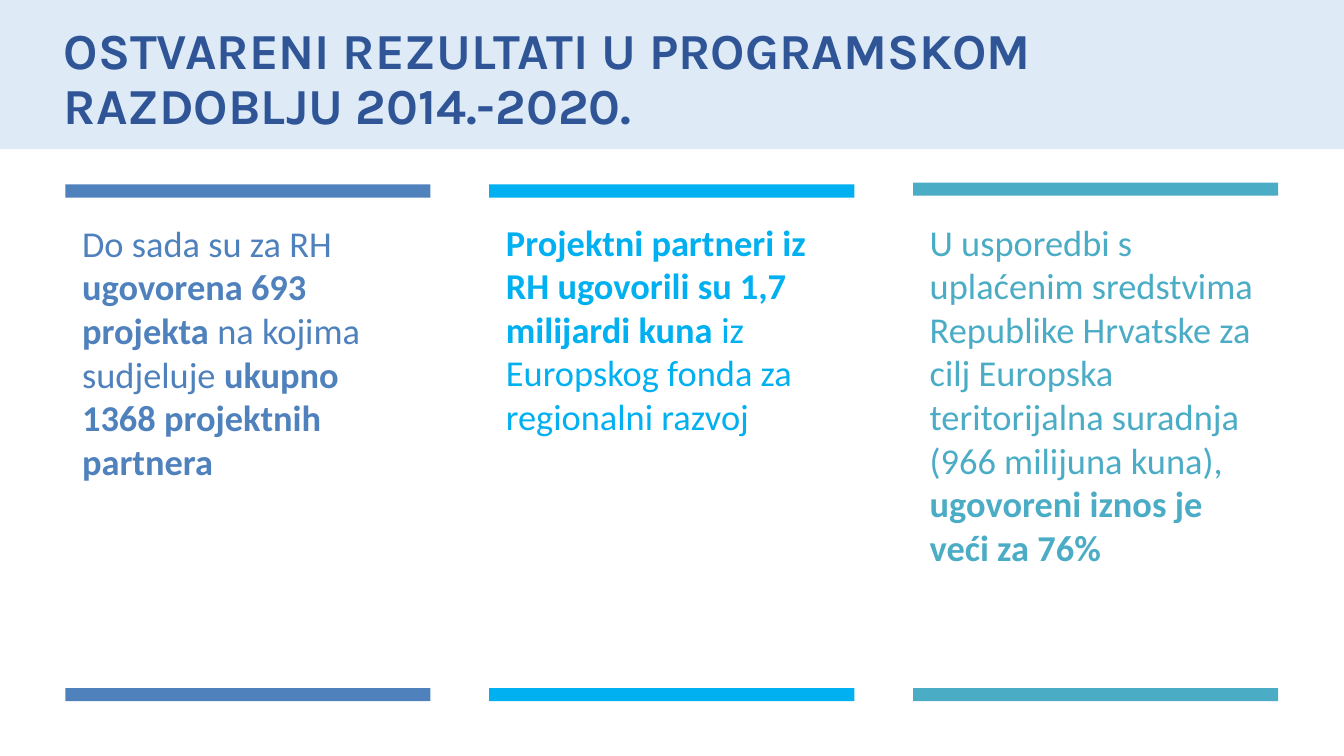
import pptx
import pptx.dml.color
import pptx.enum.shapes
import pptx.enum.text
import pptx.util

Cm = pptx.util.Cm
Pt = pptx.util.Pt
RGBColor = pptx.dml.color.RGBColor
RECTANGLE = pptx.enum.shapes.MSO_SHAPE.RECTANGLE
ANCHOR = pptx.enum.text.MSO_ANCHOR
AUTO_SIZE = pptx.enum.text.MSO_AUTO_SIZE

PALE_BLUE = RGBColor(0xDE, 0xEB, 0xF7)
NAVY = RGBColor(0x2F, 0x55, 0x97)
BLUE = RGBColor(0x4F, 0x81, 0xBD)
SKY = RGBColor(0x00, 0xB0, 0xF0)
TEAL = RGBColor(0x4B, 0xAC, 0xC6)

# Content: each result has a colour, the top of its upper bar and text top in cm,
# and its text as (words, bold) pieces
HEADING = "OSTVARENI REZULTATI U PROGRAMSKOM RAZDOBLJU 2014.-2020."
RESULTS = [
    (BLUE, 4.65, 5.44, [
        ("Do sada su za RH ", False),
        ("ugovorena 693 projekta ", True),
        ("na kojima sudjeluje ", False),
        ("ukupno 1368 projektnih partnera", True),
    ]),
    (SKY, 4.65, 5.41, [
        ("Projektni partneri iz RH ugovorili su 1,7 milijardi kuna", True),
        (" iz Europskog fonda za regionalni razvoj", False),
    ]),
    (TEAL, 4.6, 5.41, [
        ("U usporedbi s uplaćenim sredstvima Republike Hrvatske za cilj Europska "
         "teritorijalna suradnja (966 milijuna kuna), ", False),
        ("ugovoreni iznos je veći za 76%", True),
    ]),
]

# Column grid in cm
FIRST_LEFT, COLUMN_PITCH, COLUMN_WIDTH = 1.65, 10.68, 9.2
BAR_HEIGHT, LOWER_BAR_TOP = 0.33, 17.34
TEXT_INDENT, TEXT_HEIGHT = 0.17, 9.17


def add_block(slide, left, top, width, height, color):
    block = slide.shapes.add_shape(RECTANGLE, left, top, width, height)
    block.shadow.inherit = False
    block.fill.solid()
    block.fill.fore_color.rgb = color
    block.line.fill.background()
    return block


def add_result(slide, left, color, bar_top, text_top, pieces):
    for top in (bar_top, LOWER_BAR_TOP):
        add_block(slide, Cm(left), Cm(top), Cm(COLUMN_WIDTH), Cm(BAR_HEIGHT), color)
    result = slide.shapes.add_textbox(
        Cm(left + TEXT_INDENT), Cm(text_top),
        Cm(COLUMN_WIDTH - 2 * TEXT_INDENT), Cm(TEXT_HEIGHT))
    result.text_frame.word_wrap = True
    paragraph = result.text_frame.paragraphs[0]
    paragraph.font.name = "Calibri"
    paragraph.font.size = Pt(26)
    paragraph.font.color.rgb = color
    for words, bold in pieces:
        run = paragraph.add_run()
        run.text = words
        run.font.bold = bold


def main():
    deck = pptx.Presentation()
    deck.slide_width, deck.slide_height = Cm(33.87), Cm(19.05)
    slide = deck.slides.add_slide(deck.slide_layouts[5])

    # Heading on its band
    heading = slide.shapes.title
    heading.left, heading.top = Cm(1.35), Cm(0.69)
    heading.width, heading.height = Cm(31.17), Cm(2.69)
    heading.text_frame.text = HEADING
    heading.text_frame.word_wrap = True
    heading.text_frame.auto_size = AUTO_SIZE.NONE
    heading.text_frame.vertical_anchor = ANCHOR.MIDDLE
    paragraph = heading.text_frame.paragraphs[0]
    paragraph.alignment = pptx.enum.text.PP_ALIGN.LEFT
    paragraph.line_spacing = 0.9
    paragraph.font.name = "Karla"
    paragraph.font.size = Pt(36)
    paragraph.font.bold = True
    paragraph.font.color.rgb = NAVY
    band = add_block(slide, 0, 0, deck.slide_width, Cm(3.76), PALE_BLUE)
    heading.element.addprevious(band.element)

    # Three result columns
    for column, result in enumerate(RESULTS):
        add_result(slide, FIRST_LEFT + column * COLUMN_PITCH, *result)

    deck.save("out.pptx")


if __name__ == "__main__":
    main()
